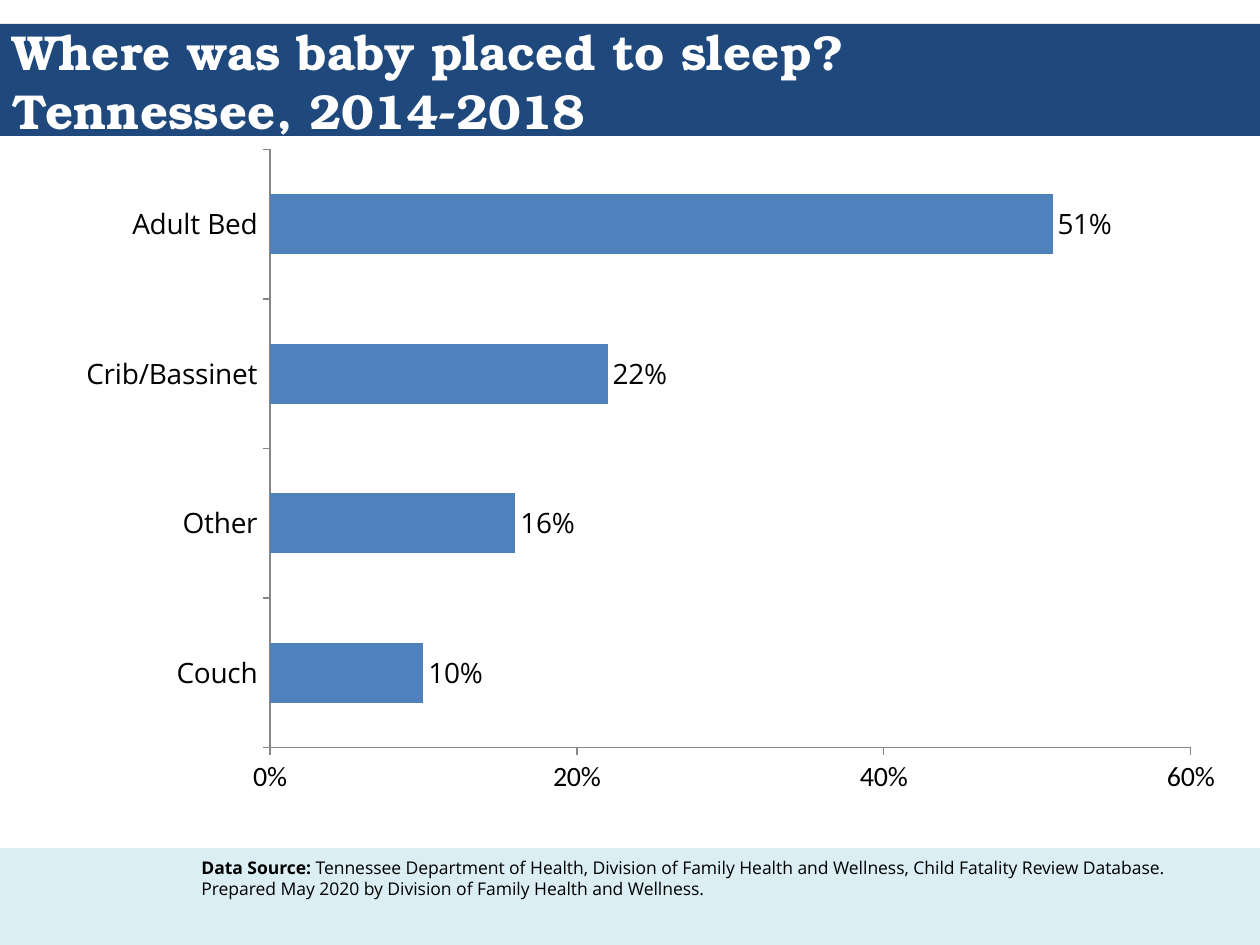
from dataclasses import dataclass

from lxml.etree import SubElement
from pptx import Presentation
from pptx.chart.data import CategoryChartData
from pptx.dml.color import RGBColor
from pptx.enum.chart import XL_CHART_TYPE as ChartType
from pptx.enum.chart import XL_LABEL_POSITION as LabelPos
from pptx.enum.chart import XL_TICK_MARK as Tick
from pptx.enum.shapes import MSO_SHAPE as Shape
from pptx.enum.text import MSO_ANCHOR as Anchor
from pptx.enum.text import MSO_AUTO_SIZE as AutoSize
from pptx.enum.text import PP_ALIGN as Align
from pptx.oxml.ns import qn
from pptx.util import Emu, Pt

SCALE = 914400 / 126


@dataclass(frozen=True)
class Theme:
    navy: str = "1F497D"
    pale: str = "DBEEF4"
    bar: str = "4F81BD"
    axis: str = "868686"
    white: str = "FFFFFF"
    black: str = "000000"
    title_font: str = "TeX Gyre Bonum"
    body_font: str = "Open Sans"
    axis_font: str = "Calibri"
    title_size: int = 28
    label_size: int = 16
    source_size: int = 10


THEME = Theme()


def px(n):
    return Emu(round(n * SCALE))


def rgb(value):
    return RGBColor.from_string(value)


def set_attrs(obj, **values):
    for name, value in values.items():
        setattr(obj, name, value)


def set_font(font, name, size, color, bold=False):
    set_attrs(font, name=name, size=Pt(size), bold=bold)
    font.color.rgb = rgb(color)


def place(s, box):
    set_attrs(s, **dict(zip(("left", "top", "width", "height"), map(px, box))))


def add_band(slide, box, color):
    s = slide.shapes.add_shape(Shape.RECTANGLE, *map(px, box))
    s.shadow.inherit = False
    s.fill.solid()
    s.fill.fore_color.rgb = rgb(color)
    s.line.fill.background()


def set_title(slide, text, box):
    s = slide.shapes.title
    slide.shapes._spTree.append(s._element)
    place(s, box)
    tf = s.text_frame
    set_attrs(tf, text=text, vertical_anchor=Anchor.MIDDLE,
              auto_size=AutoSize.NONE, word_wrap=True)
    p = tf.paragraphs[0]
    p.alignment = Align.LEFT
    for r in p.runs:
        set_font(r.font, THEME.title_font, THEME.title_size, THEME.white, True)


def add_source(slide, runs, box):
    tf = slide.shapes.add_textbox(*map(px, box)).text_frame
    tf.word_wrap = True
    p = tf.paragraphs[0]
    for text, bold in runs:
        r = p.add_run()
        r.text = text
        set_font(r.font, THEME.body_font, THEME.source_size, THEME.black, bold)


def format_axis(axis, font, **values):
    set_attrs(axis, has_major_gridlines=False, major_tick_mark=Tick.OUTSIDE,
              minor_tick_mark=Tick.NONE, **values)
    axis.format.line.color.rgb = rgb(THEME.axis)
    axis.format.line.width = Pt(0.75)
    set_font(axis.tick_labels.font, font, THEME.label_size, THEME.black)


def set_plot_area(chart, **fractions):
    area = chart._chartSpace.find(".//" + qn("c:plotArea"))
    for old in area.findall(qn("c:layout")):
        area.remove(old)
    layout = SubElement(area, qn("c:layout"))
    area.insert(0, layout)
    manual = SubElement(layout, qn("c:manualLayout"))
    values = {"layoutTarget": "inner", "xMode": "edge", "yMode": "edge", **fractions}
    for tag, value in values.items():
        SubElement(manual, qn(f"c:{tag}")).set("val", str(value))


def add_bar_chart(slide, shares, box):
    data = CategoryChartData(number_format="0%")
    data.categories = list(shares)
    data.add_series("Series 1", list(shares.values()))
    chart = slide.shapes.add_chart(
        ChartType.BAR_CLUSTERED, *map(px, box), data).chart
    set_attrs(chart, has_legend=False, has_title=False)
    set_font(chart.font, THEME.axis_font, THEME.source_size, THEME.black)
    set_plot_area(chart, x=0.176, y=0.02, w=0.783, h=0.89)

    format_axis(chart.category_axis, THEME.body_font)
    format_axis(chart.value_axis, THEME.axis_font,
                minimum_scale=0, maximum_scale=0.6, major_unit=0.2)
    set_attrs(chart.value_axis.tick_labels,
              number_format="0%", number_format_is_linked=False)

    plot = chart.plots[0]
    set_attrs(plot, gap_width=150, vary_by_categories=False, has_data_labels=True)
    fill = plot.series[0].format.fill
    fill.solid()
    fill.fore_color.rgb = rgb(THEME.bar)
    labels = plot.data_labels
    set_attrs(labels, show_value=True, number_format="0%",
              number_format_is_linked=False, position=LabelPos.OUTSIDE_END)
    set_font(labels.font, THEME.body_font, THEME.label_size, THEME.black)


def main():
    prs = Presentation()
    set_attrs(prs, slide_width=px(1260), slide_height=px(945))
    slide = prs.slides.add_slide(prs.slide_layouts[5])

    add_band(slide, (0, 24, 1260, 112), THEME.navy)
    add_band(slide, (0, 848, 1260, 97), THEME.pale)
    set_title(slide, "Where was baby placed to sleep?\vTennessee, 2014-2018",
              (0, 24, 1260, 113))
    add_source(slide, [
        ("Data Source: ", True),
        ("Tennessee Department of Health, Division of Family Health and Wellness, "
         "Child Fatality Review Database. Prepared May 2020 by Division of Family "
         "Health and Wellness.", False),
    ], (189, 851, 1050, 93))
    add_bar_chart(slide, {"Couch": 0.10, "Other": 0.16, "Crib/Bassinet": 0.22,
                          "Adult Bed": 0.51}, (63, 136, 1176, 672))
    prs.save("out.pptx")


if __name__ == "__main__":
    main()
